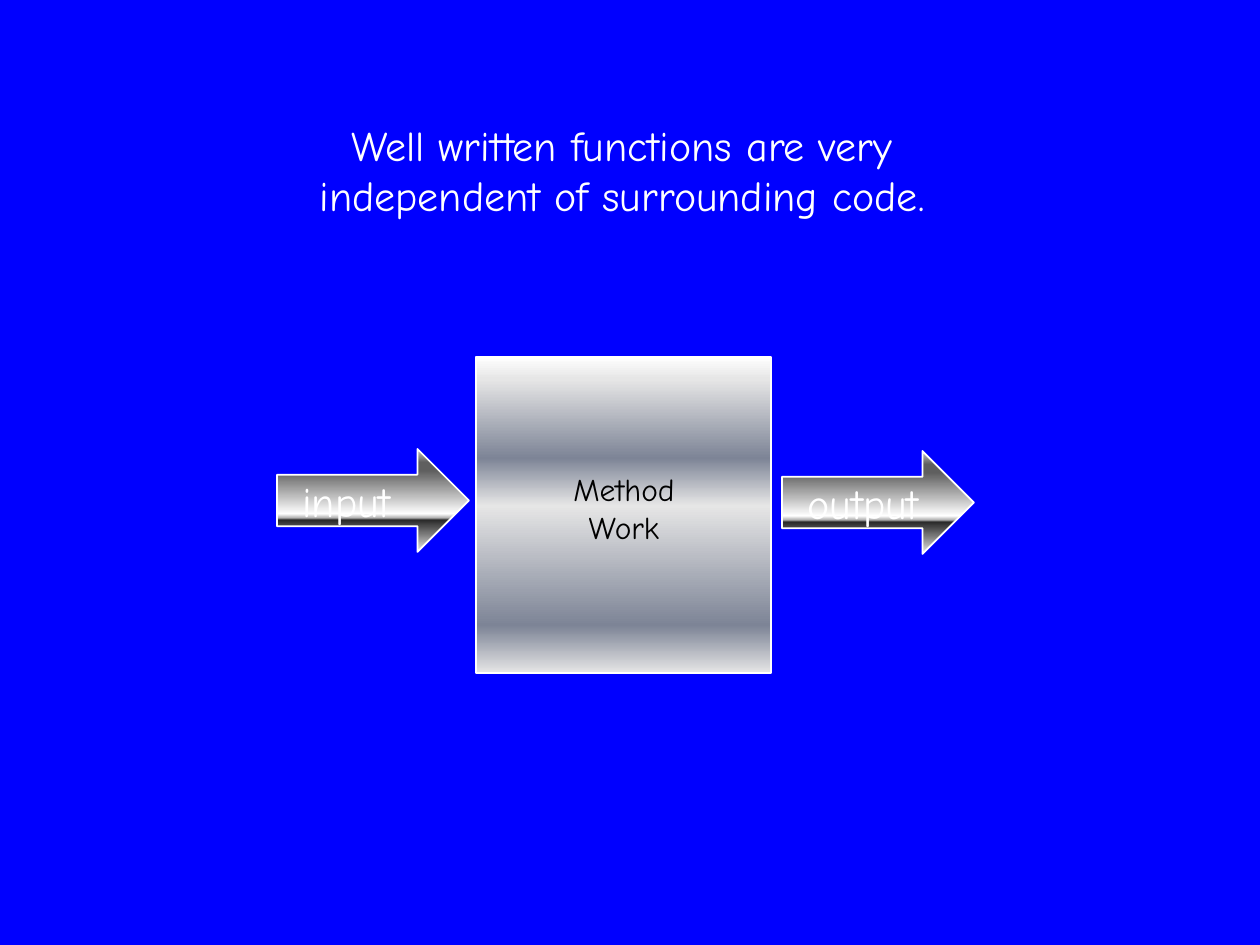
from lxml import etree
from pptx import Presentation
from pptx.dml.color import RGBColor as RGB
from pptx.enum.shapes import MSO_SHAPE as SHAPE
from pptx.enum.text import MSO_ANCHOR as ANCHOR, MSO_AUTO_SIZE as AUTO, PP_ALIGN as ALIGN
from pptx.oxml.ns import qn
from pptx.util import Emu, Pt

FONT = "Comic Neue"
WHITE = RGB(255, 255, 255)
BLACK = RGB(0, 0, 0)
BLUE = RGB(0, 0, 255)

TITLE = ["Well written functions are very", "independent of surrounding code."]
METHOD = ["Method", "Work"]
ARROWS = [("input", 277, 449, 125), ("output", 782, 451, 155)]
STEEL = [(0, RGB(255, 255, 255)), (7, RGB(230, 230, 230)), (32, RGB(125, 132, 150)),
         (47, RGB(230, 230, 230)), (85, RGB(125, 132, 150)), (100, RGB(230, 230, 230))]
CHROME = [(0, RGB(203, 203, 203)), (13, RGB(95, 95, 95)), (21, RGB(95, 95, 95)),
          (63, RGB(255, 255, 255)), (67, RGB(178, 178, 178)), (69, RGB(41, 41, 41)),
          (82, RGB(119, 119, 119)), (100, RGB(234, 234, 234))]


def px(*sizes):
    return [Emu(round(size * 914400 / 126)) for size in sizes]


def write(shape, lines, size=24, color=WHITE, align=ALIGN.CENTER):
    frame = shape.text_frame
    frame.text = "\n".join(lines)
    frame.word_wrap = False
    frame.auto_size = AUTO.SHAPE_TO_FIT_TEXT
    frame.vertical_anchor = ANCHOR.TOP
    for para in frame.paragraphs:
        para.alignment = align
        para.font.name = FONT
        para.font.size = Pt(size)
        para.font.color.rgb = color


def draw(kind, box, stops):
    shape = slide.shapes.add_shape(kind, *px(*box))
    shape.shadow.inherit = False
    shape.line.color.rgb = WHITE
    shape.line.width = Pt(1)
    shape.fill.gradient()
    shape.fill.gradient_angle = 270
    ramp = shape.fill._fill._gradFill.find(qn("a:gsLst"))
    for old in list(ramp):
        ramp.remove(old)
    for place, color in stops:
        stop = etree.SubElement(ramp, qn("a:gs"), pos=str(place * 1000))
        etree.SubElement(stop, qn("a:srgbClr"), val=str(color))


deck = Presentation()
deck.slide_width, deck.slide_height = px(1260, 945)
slide = deck.slides.add_slide(deck.slide_layouts[5])
slide.background.fill.solid()
slide.background.fill.fore_color.rgb = BLUE

title = slide.shapes.title
title.left, title.top, title.width, title.height = px(270, 113, 704, 115)
write(title, TITLE)

draw(SHAPE.RECTANGLE, (476, 357, 295, 316), STEEL)
write(slide.shapes.add_textbox(*px(554, 464, 140, 89)), METHOD, size=18, color=BLACK)

for word, left, top, width in ARROWS:
    draw(SHAPE.RIGHT_ARROW, (left, top, 192, 103), CHROME)
    label = slide.shapes.add_textbox(*px(left + 13, top + 20, width, 63))
    write(label, [word], align=ALIGN.LEFT)

deck.save("out.pptx")
